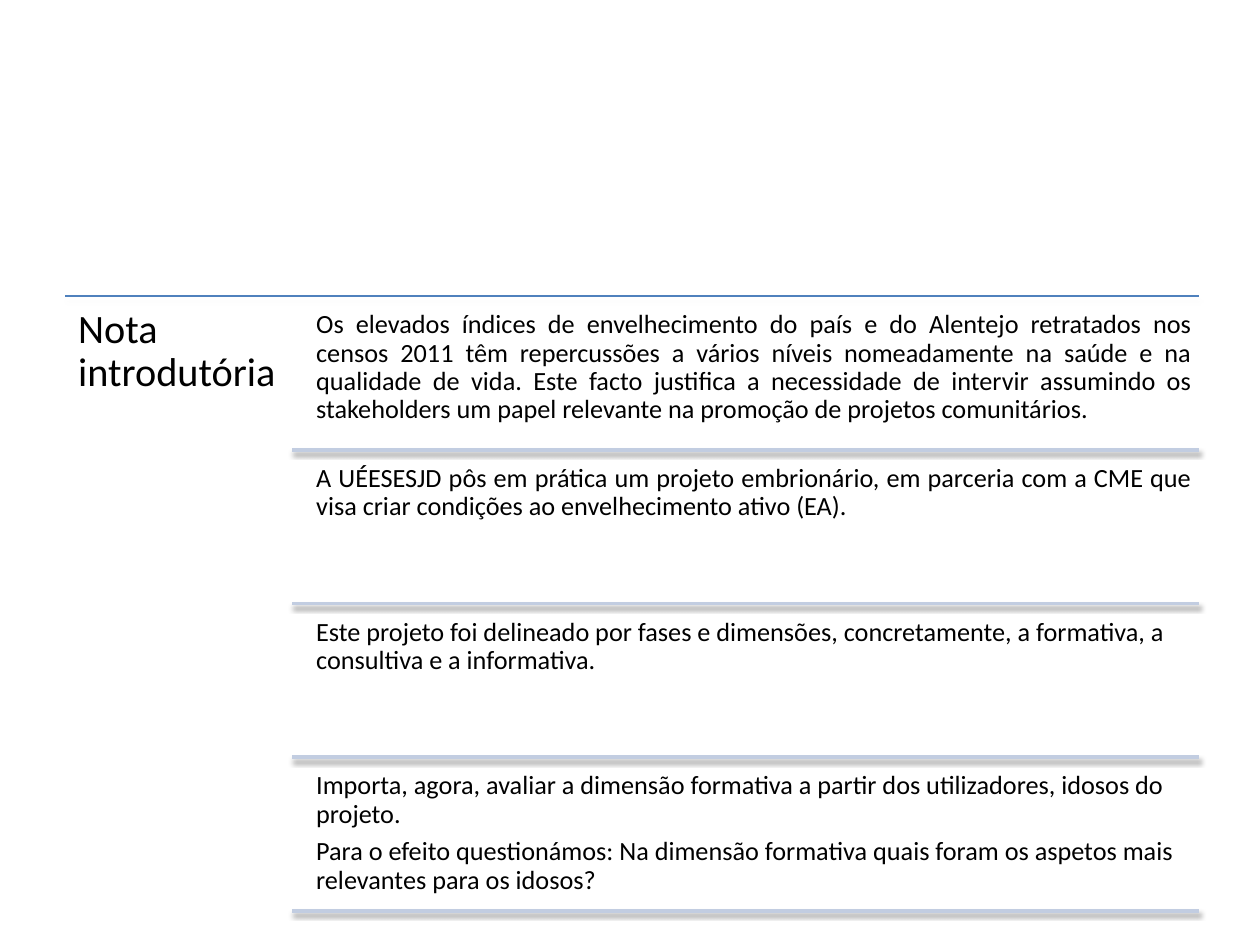
from dataclasses import dataclass

from lxml import etree
from pptx import Presentation
from pptx.dml.color import RGBColor
from pptx.enum.shapes import MSO_CONNECTOR
from pptx.enum.text import MSO_ANCHOR, MSO_AUTO_SIZE, PP_ALIGN
from pptx.oxml.ns import qn
from pptx.util import Inches, Pt

STRAIGHT = MSO_CONNECTOR.STRAIGHT
TOP = MSO_ANCHOR.TOP
NO_AUTOFIT = MSO_AUTO_SIZE.NONE
LEFT, JUSTIFY = PP_ALIGN.LEFT, PP_ALIGN.JUSTIFY

BLACK = RGBColor(0x00, 0x00, 0x00)
BLUE = RGBColor(0x4F, 0x81, 0xBD)
PALE_BLUE = RGBColor(0xC2, 0xCD, 0xE1)

# Grid, in inches: a label column, then one column of equal rows
GRID_LEFT, GRID_TOP, GRID_WIDTH = 0.52, 2.35, 9.0
GRID_RIGHT = GRID_LEFT + GRID_WIDTH
LABEL_WIDTH = GRID_WIDTH / 5
ROW_PITCH, ROW_GAP = 1.22, 0.06
ROWS_LEFT = GRID_LEFT + LABEL_WIDTH
TEXT_LEFT = ROWS_LEFT + 0.13


@dataclass(frozen=True)
class Statement:
    paragraphs: tuple[str, ...]
    align: PP_ALIGN


@dataclass(frozen=True)
class RuleStyle:
    color: RGBColor
    width: float
    shadow_distance: float
    shadow_opacity: int


HEADING_RULE = RuleStyle(BLUE, 0.75, 1.8, 35)
ROW_RULE = RuleStyle(PALE_BLUE, 2, 1.6, 38)

HEADING = Statement(("Nota introdutória",), LEFT)
STATEMENTS = (
    Statement((
        "Os elevados índices de envelhecimento do país e do Alentejo retratados "
        "nos censos 2011 têm repercussões a vários níveis nomeadamente na saúde "
        "e na qualidade de vida. Este facto justifica a necessidade de intervir "
        "assumindo os stakeholders um papel relevante na promoção de projetos "
        "comunitários.",), JUSTIFY),
    Statement((
        "A UÉESESJD pôs em prática um projeto embrionário, em parceria com a CME "
        "que visa criar condições ao envelhecimento ativo (EA).",), JUSTIFY),
    Statement((
        "Este projeto foi delineado por fases e dimensões, concretamente, "
        "a formativa, a consultiva e a informativa.",), LEFT),
    Statement((
        "Importa, agora, avaliar a dimensão formativa a partir dos utilizadores, "
        "idosos do projeto.",
        "Para o efeito questionámos: Na dimensão formativa quais foram os "
        "aspetos mais relevantes para os idosos?"), LEFT),
)


def fill_text(shape, statement: Statement, size: float, inset: float) -> None:
    frame = shape.text_frame
    margin = Inches(inset)
    frame_format = {
        "margin_left": margin, "margin_top": margin,
        "margin_right": margin, "margin_bottom": margin,
        "word_wrap": True, "auto_size": NO_AUTOFIT, "vertical_anchor": TOP,
    }
    for name, value in frame_format.items():
        setattr(frame, name, value)
    frame.text = "\n".join(statement.paragraphs)
    paragraph_format = {
        "alignment": statement.align, "line_spacing": 0.9,
        "space_before": Pt(0), "space_after": Pt(size * 0.35),
    }
    for paragraph in frame.paragraphs:
        for name, value in paragraph_format.items():
            setattr(paragraph, name, value)
        font = paragraph.font
        font.name, font.size = "Calibri", Pt(size)
        font.color.rgb = BLACK


def add_rule(slide, left: float, top: float, style: RuleStyle) -> None:
    """Draw a horizontal line to the grid's right edge, with a soft shadow below."""
    rule = slide.shapes.add_connector(
        STRAIGHT, Inches(left), Inches(top), Inches(GRID_RIGHT), Inches(top))
    rule.line.color.rgb = style.color
    rule.line.width = Pt(style.width)
    effects = etree.SubElement(rule._element.spPr, qn("a:effectLst"))
    shadow = etree.SubElement(
        effects, qn("a:outerShdw"), blurRad=str(Pt(3.1)),
        dist=str(Pt(style.shadow_distance)), dir="5400000", rotWithShape="0")
    color = etree.SubElement(shadow, qn("a:srgbClr"), val=str(BLACK))
    etree.SubElement(color, qn("a:alpha"), val=str(style.shadow_opacity * 1000))


def add_heading(slide) -> None:
    title = slide.shapes.title
    title.left, title.top = Inches(GRID_LEFT), Inches(GRID_TOP)
    title.width, title.height = Inches(LABEL_WIDTH), Inches(4.95)
    fill_text(title, HEADING, size=23, inset=0.1)


def add_statement(slide, row: int, statement: Statement) -> None:
    """Place one statement in its grid row and close the row with a rule."""
    top = GRID_TOP + row * ROW_PITCH
    box = slide.shapes.add_textbox(
        Inches(TEXT_LEFT), Inches(top + ROW_GAP),
        Inches(GRID_RIGHT - TEXT_LEFT), Inches(ROW_PITCH - ROW_GAP))
    fill_text(box, statement, size=15, inset=0.06)
    add_rule(slide, ROWS_LEFT, top + ROW_PITCH, ROW_RULE)


def main() -> None:
    deck = Presentation()
    deck.slide_width, deck.slide_height = Inches(10), Inches(7.5)
    title_only = deck.slide_layouts[5]
    slide = deck.slides.add_slide(title_only)
    add_rule(slide, GRID_LEFT, GRID_TOP, HEADING_RULE)
    add_heading(slide)
    for row, statement in enumerate(STATEMENTS):
        add_statement(slide, row, statement)
    deck.save("out.pptx")


if __name__ == "__main__":
    main()
